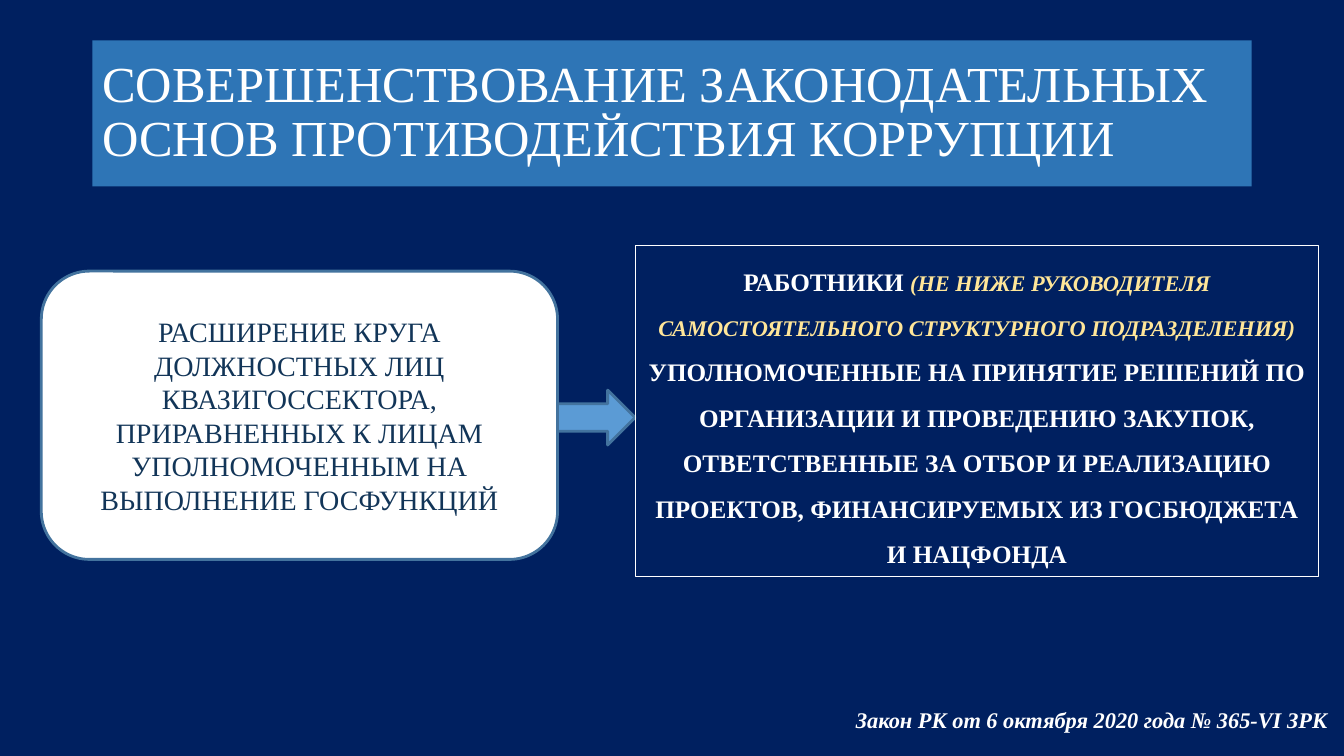
from pptx import Presentation
from pptx.dml.color import RGBColor
from pptx.enum.shapes import MSO_SHAPE as Shape
from pptx.enum.text import MSO_ANCHOR as Anchor, MSO_AUTO_SIZE as AutoSize, PP_ALIGN as Align
from pptx.util import Inches, Pt

NAVY = RGBColor(0x00, 0x20, 0x60)
BLUE = RGBColor(0x2E, 0x75, 0xB6)
SKY = RGBColor(0x5B, 0x9B, 0xD5)
STEEL = RGBColor(0x43, 0x73, 0x9E)
INK = RGBColor(0x12, 0x35, 0x58)
SAND = RGBColor(0xFF, 0xE6, 0x99)
WHITE = RGBColor(0xFF, 0xFF, 0xFF)
FONT = "Times New Roman"

WIDTH, HEIGHT = 13.33, 7.5
TITLE = "СОВЕРШЕНСТВОВАНИЕ ЗАКОНОДАТЕЛЬНЫХ ОСНОВ ПРОТИВОДЕЙСТВИЯ КОРРУПЦИИ"
MEASURE = ("РАСШИРЕНИЕ КРУГА ДОЛЖНОСТНЫХ ЛИЦ КВАЗИГОССЕКТОРА, "
           "ПРИРАВНЕННЫХ К ЛИЦАМ УПОЛНОМОЧЕННЫМ НА ВЫПОЛНЕНИЕ ГОСФУНКЦИЙ")
STAFF = [
    ("РАБОТНИКИ ", {"size": 18, "bold": True}),
    ("(НЕ НИЖЕ РУКОВОДИТЕЛЯ САМОСТОЯТЕЛЬНОГО СТРУКТУРНОГО ПОДРАЗДЕЛЕНИЯ)",
     {"size": 16, "bold": True, "italic": True, "color": SAND}),
    (" УПОЛНОМОЧЕННЫЕ НА ПРИНЯТИЕ РЕШЕНИЙ ПО ОРГАНИЗАЦИИ И ПРОВЕДЕНИЮ ЗАКУПОК, "
     "ОТВЕТСТВЕННЫЕ ЗА ОТБОР И РЕАЛИЗАЦИЮ ПРОЕКТОВ, ФИНАНСИРУЕМЫХ ИЗ ГОСБЮДЖЕТА "
     "И НАЦФОНДА", {"size": 18, "bold": True}),
]
LAW = "Закон РК от 6 октября 2020 года № 365-VI ЗРК"

# Left, top, width, height in inches
TITLE_AREA = ((WIDTH - 11.5) / 2, 0.4, 11.5, 1.45)
MEASURE_AREA = (0.41, 2.69, 5.12, 2.86)
STAFF_AREA = (6.3, 2.44, 6.78, 3.28)
ARROW_WIDTH = 1.53
ARROW_AREA = (STAFF_AREA[0] - ARROW_WIDTH, 3.87, ARROW_WIDTH, 1.09)
LAW_AREA = (WIDTH - 4.94, 6.96, 4.94, 0.37)


def add_span(para, text, size, color=WHITE, bold=False, italic=False):
    span = para.add_run()
    span.text = text
    font = span.font
    font.name, font.size, font.bold, font.italic = FONT, Pt(size), bold, italic
    font.color.rgb = color


def write(box, spans, align=Align.LEFT, anchor=Anchor.MIDDLE, spacing=1.0, wrap=True):
    """Fill the box with one paragraph made of (text, format) spans."""
    frame = box.text_frame
    frame.word_wrap, frame.auto_size = wrap, AutoSize.NONE
    frame.vertical_anchor = anchor
    para = frame.paragraphs[0]
    para.alignment, para.line_spacing = align, spacing
    for text, look in spans:
        add_span(para, text, **look)


def add_box(page, kind, area, fill=None, line=STEEL, line_width=2):
    box = page.shapes.add_shape(kind, *map(Inches, area))
    box.shadow.inherit = False
    if fill is None:
        box.fill.background()
    else:
        box.fill.solid()
        box.fill.fore_color.rgb = fill
    box.line.color.rgb = line
    box.line.width = Pt(line_width)
    return box


def main():
    deck = Presentation()
    deck.slide_width, deck.slide_height = Inches(WIDTH), Inches(HEIGHT)
    page = deck.slides.add_slide(deck.slide_layouts.get_by_name("Title Only"))
    page.background.fill.solid()
    page.background.fill.fore_color.rgb = NAVY

    title = page.shapes.title
    title.left, title.top, title.width, title.height = map(Inches, TITLE_AREA)
    title.fill.solid()
    title.fill.fore_color.rgb = BLUE
    write(title, [(TITLE, {"size": 36})], spacing=0.9)

    # The bend of the arrow lies behind the rounded box
    add_box(page, Shape.BENT_ARROW, ARROW_AREA, SKY)
    measure = add_box(page, Shape.ROUNDED_RECTANGLE, MEASURE_AREA, WHITE)
    write(measure, [(MEASURE, {"size": 20, "color": INK})], Align.CENTER)
    staff = add_box(page, Shape.RECTANGLE, STAFF_AREA, line=WHITE, line_width=0.75)
    write(staff, STAFF, Align.CENTER, Anchor.TOP, spacing=1.5)

    law = page.shapes.add_textbox(*map(Inches, LAW_AREA))
    write(law, [(LAW, {"size": 16, "bold": True, "italic": True})],
          anchor=Anchor.TOP, wrap=False)
    deck.save("out.pptx")


if __name__ == "__main__":
    main()
